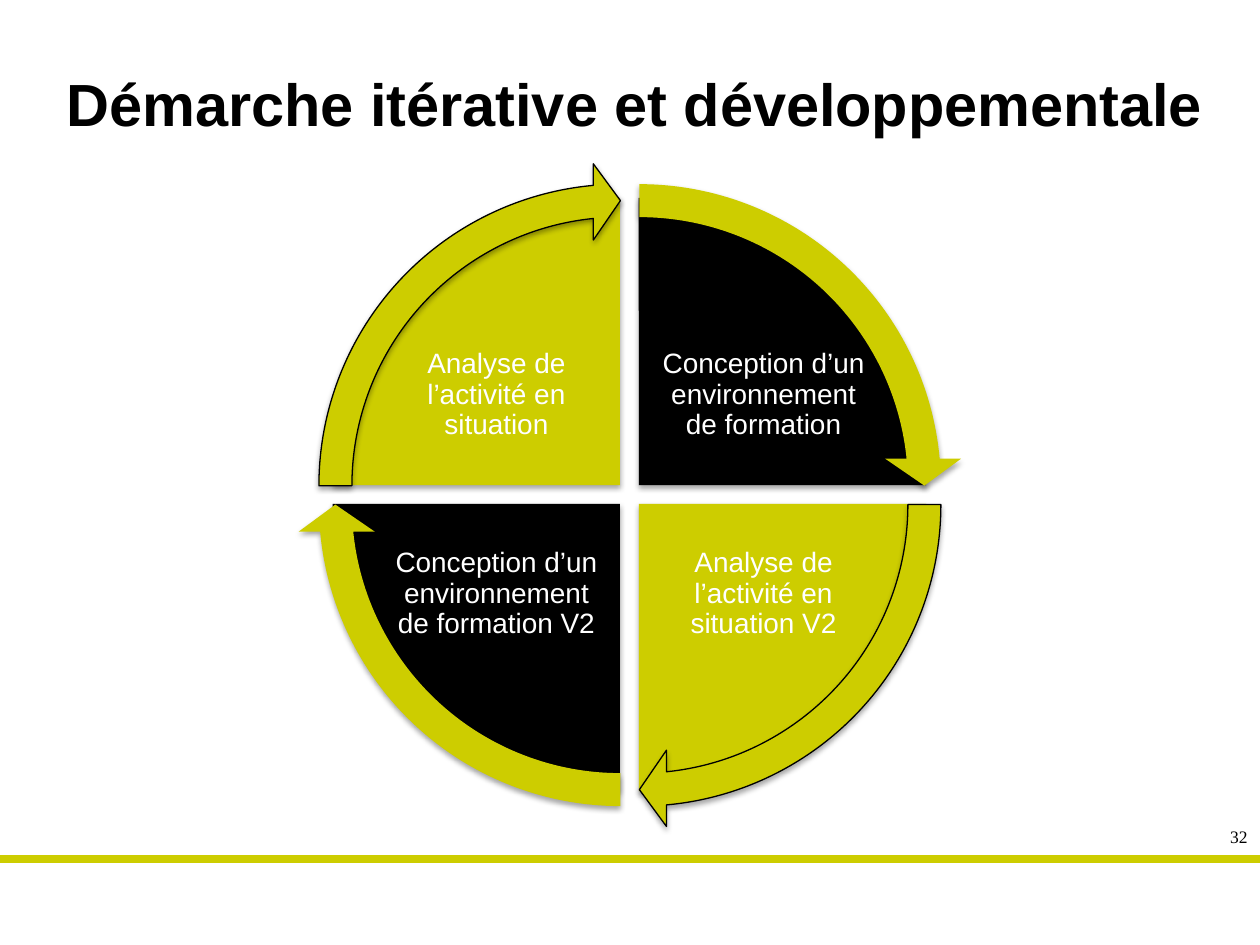
from dataclasses import dataclass

from lxml import etree
from pptx import Presentation
from pptx.dml.color import RGBColor
from pptx.enum.shapes import MSO_CONNECTOR, MSO_SHAPE
from pptx.enum.text import MSO_ANCHOR, PP_ALIGN
from pptx.oxml.ns import qn
from pptx.util import Inches, Pt

PIE, CIRCULAR_ARROW = MSO_SHAPE.PIE, MSO_SHAPE.CIRCULAR_ARROW
STRAIGHT = MSO_CONNECTOR.STRAIGHT
LEFT, CENTER, RIGHT = PP_ALIGN.LEFT, PP_ALIGN.CENTER, PP_ALIGN.RIGHT
TOP, MIDDLE = MSO_ANCHOR.TOP, MSO_ANCHOR.MIDDLE

BLACK = RGBColor(0x00, 0x00, 0x00)
WHITE = RGBColor(0xFF, 0xFF, 0xFF)
OLIVE = RGBColor(0xCD, 0xCD, 0x00)

# Angles are in adjustment units: 0.6 for one degree
QUARTER_TURN = 54
FULL_TURN = 216
ARROW_SWEEP = 50.725
ARROW_HEAD = 3.275
ARROW_THICKNESS = 0.051
ARROW_HEAD_WIDTH = 0.059

WEDGE_SIZE = 4.56
ARROW_SIZE = 5.13
ARROW_OUTSET = 0.28


@dataclass(frozen=True)
class Quadrant:
    text: str
    start: int
    right: bool
    bottom: bool
    fill: RGBColor
    outlined: bool

    @property
    def wedge_left(self) -> float:
        return 2.79 if self.right else 2.64

    @property
    def wedge_top(self) -> float:
        return 1.72 if self.bottom else 1.57


@dataclass(frozen=True)
class TextStyle:
    size: float
    color: RGBColor
    align: PP_ALIGN
    font: str = "Arial"
    bold: bool = False
    anchor: MSO_ANCHOR = TOP
    spacing: float = 1.0
    inset_x: float = 0.1
    inset_y: float = 0.05


QUADRANTS = [
    Quadrant("Conception d’un environnement de formation", 162, True, False, BLACK, False),
    Quadrant("Analyse de l’activité en situation V2", 0, True, True, OLIVE, True),
    Quadrant("Conception d’un environnement de formation V2", 54, False, True, BLACK, False),
    Quadrant("Analyse de l’activité en situation", 108, False, False, OLIVE, True),
]

TITLE_STYLE = TextStyle(34, BLACK, LEFT, bold=True, inset_y=0.09)
LABEL_STYLE = TextStyle(16, WHITE, CENTER, anchor=MIDDLE, spacing=0.9,
                        inset_x=0.02, inset_y=0.02)
NUMBER_STYLE = TextStyle(10, BLACK, RIGHT, font="Times New Roman")


def add_text(page, text: str, left: float, top: float, width: float,
             height: float, style: TextStyle) -> None:
    box = page.shapes.add_textbox(Inches(left), Inches(top), Inches(width), Inches(height))
    frame = box.text_frame
    frame.text = text
    frame.word_wrap = True
    frame.vertical_anchor = style.anchor
    frame.margin_left = frame.margin_right = Inches(style.inset_x)
    frame.margin_top = frame.margin_bottom = Inches(style.inset_y)
    para = frame.paragraphs[0]
    para.alignment = style.align
    para.line_spacing = style.spacing
    font = para.runs[0].font
    font.name = style.font
    font.size = Pt(style.size)
    font.bold = style.bold
    font.color.rgb = style.color


def add_soft_shadow(shape) -> None:
    """Give the shape a faint shadow straight below it."""
    shape.shadow.inherit = False
    effects = shape.element.spPr.find(qn("a:effectLst"))
    shadow = etree.SubElement(effects, qn("a:outerShdw"), blurRad=str(Pt(3.1)),
                              dist=str(Pt(1.8)), dir="5400000", rotWithShape="0")
    color = etree.SubElement(shadow, qn("a:srgbClr"), val=str(BLACK))
    etree.SubElement(color, qn("a:alpha"), val="35000")


def add_round_shape(page, kind: MSO_SHAPE, left: float, top: float, size: float,
                    adjustments: list[float], fill: RGBColor, outlined: bool) -> None:
    shape = page.shapes.add_shape(kind, Inches(left), Inches(top), Inches(size), Inches(size))
    for index, value in enumerate(adjustments):
        shape.adjustments[index] = value
    shape.fill.solid()
    shape.fill.fore_color.rgb = fill
    if outlined:
        shape.line.color.rgb = BLACK
        shape.line.width = Pt(0.75)
    else:
        shape.line.fill.background()
    add_soft_shadow(shape)


def add_wedge(page, quadrant: Quadrant) -> None:
    end = (quadrant.start + QUARTER_TURN) % FULL_TURN
    add_round_shape(page, PIE, quadrant.wedge_left, quadrant.wedge_top, WEDGE_SIZE,
                    [quadrant.start, end], quadrant.fill, False)
    add_text(page, quadrant.text, 5.22 if quadrant.right else 3.1,
             4.09 if quadrant.bottom else 2.51, 1.68, 1.25, LABEL_STYLE)


def add_cycle_arrow(page, quadrant: Quadrant) -> None:
    adjustments = [ARROW_THICKNESS, ARROW_HEAD, quadrant.start + ARROW_SWEEP,
                   quadrant.start, ARROW_HEAD_WIDTH]
    add_round_shape(page, CIRCULAR_ARROW, quadrant.wedge_left - ARROW_OUTSET,
                    quadrant.wedge_top - ARROW_OUTSET, ARROW_SIZE,
                    adjustments, OLIVE, quadrant.outlined)


def add_footer(page) -> None:
    rule = page.shapes.add_connector(STRAIGHT, Inches(0), Inches(6.82), Inches(10), Inches(6.82))
    rule.line.color.rgb = OLIVE
    rule.line.width = Pt(4.5)
    etree.SubElement(rule.element.spPr, qn("a:effectLst"))
    add_text(page, "32", 9.49, 6.51, 0.51, 0.27, NUMBER_STYLE)


def main() -> None:
    deck = Presentation()
    deck.slide_width, deck.slide_height = Inches(10), Inches(7.5)
    page = deck.slides.add_slide(deck.slide_layouts[6])
    add_footer(page)
    for quadrant in QUADRANTS:
        add_wedge(page, quadrant)
    for quadrant in QUADRANTS:
        add_cycle_arrow(page, quadrant)
    add_text(page, "Démarche itérative et développementale", 0.43, 0.44, 9.37, 1.25, TITLE_STYLE)
    deck.save("out.pptx")


if __name__ == "__main__":
    main()
